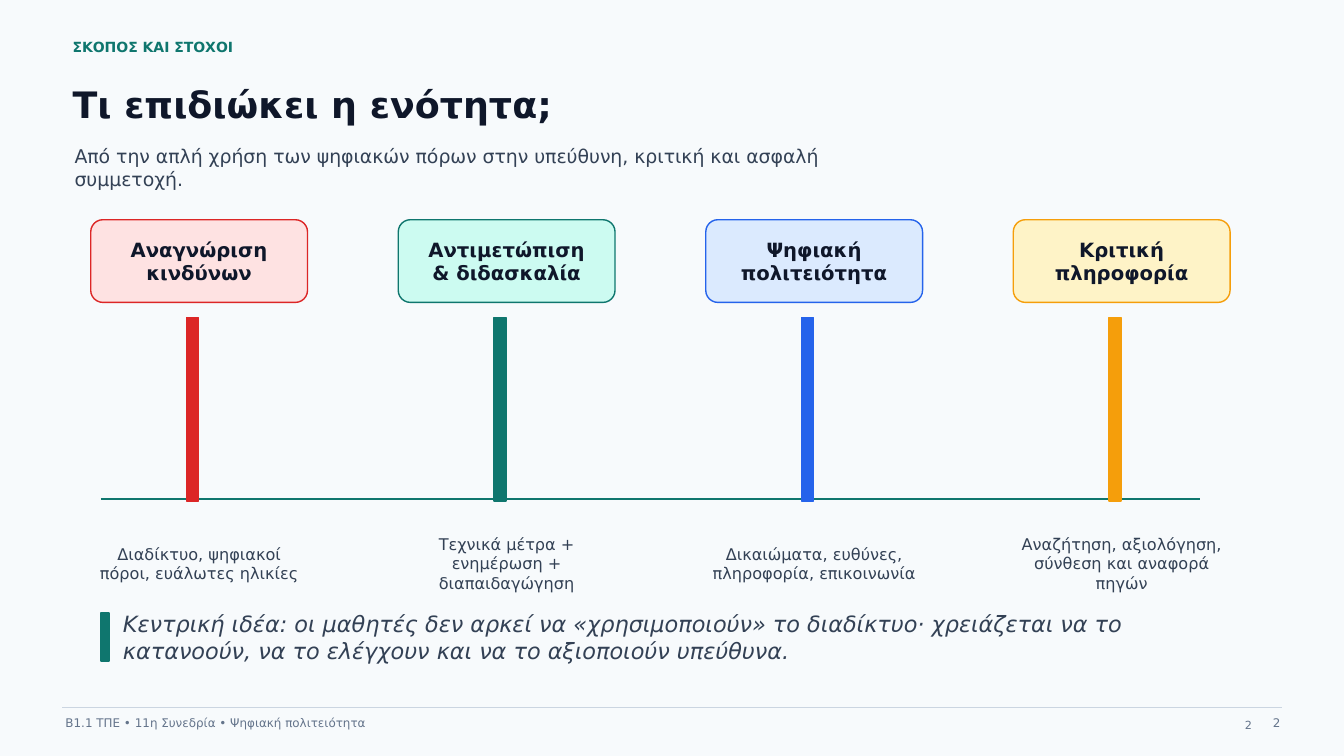
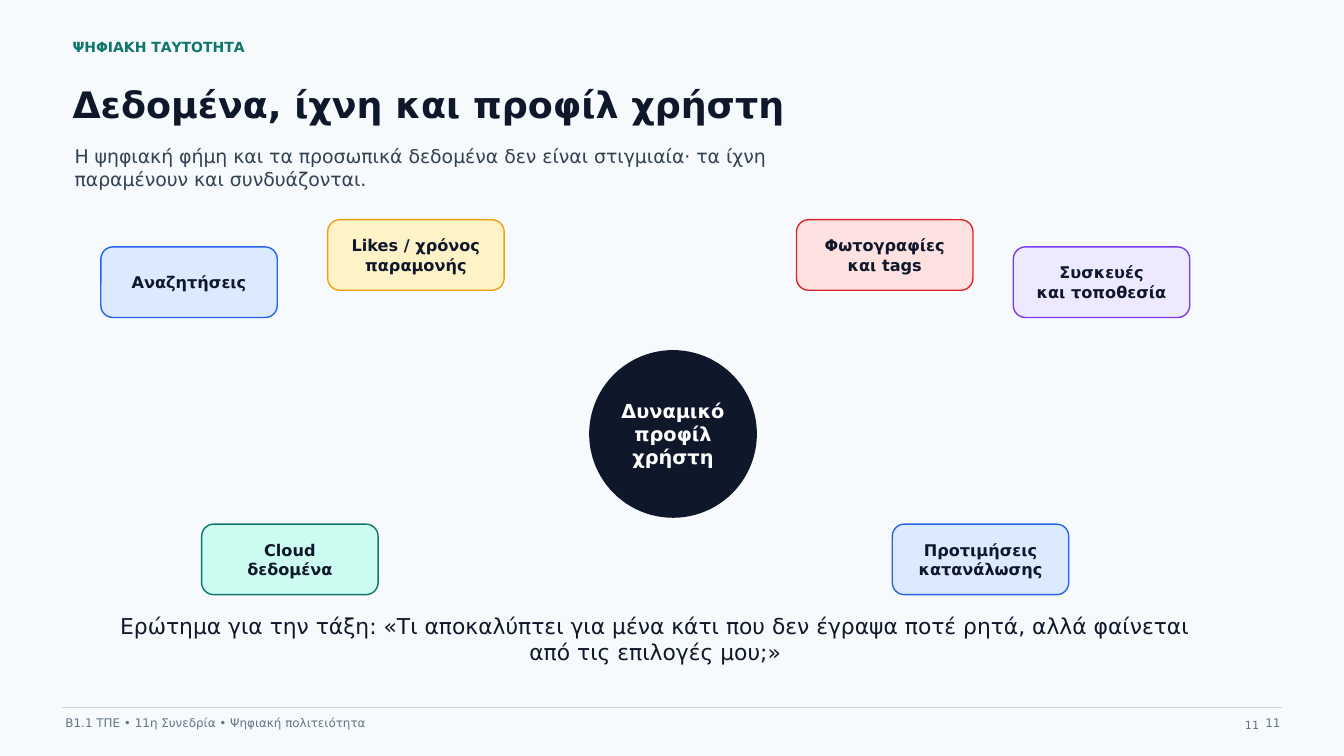
from lxml import etree
from pptx import Presentation
from pptx.dml.color import RGBColor
from pptx.enum.shapes import MSO_CONNECTOR, MSO_SHAPE
from pptx.enum.text import MSO_ANCHOR, MSO_AUTO_SIZE, PP_ALIGN
from pptx.oxml.ns import qn
from pptx.util import Inches, Pt

LEFT, CENTER, RIGHT = PP_ALIGN.LEFT, PP_ALIGN.CENTER, PP_ALIGN.RIGHT
TOP, MIDDLE = MSO_ANCHOR.TOP, MSO_ANCHOR.MIDDLE
RECT, ROUND, OVAL = MSO_SHAPE.RECTANGLE, MSO_SHAPE.ROUNDED_RECTANGLE, MSO_SHAPE.OVAL

FONT = "DejaVu Sans"
PAPER = RGBColor(0xF7, 0xFA, 0xFC)
WHITE = RGBColor(0xFF, 0xFF, 0xFF)
INK = RGBColor(0x0F, 0x17, 0x2A)
SLATE = RGBColor(0x33, 0x41, 0x55)
GREY = RGBColor(0x64, 0x74, 0x8B)
RULE = RGBColor(0xCB, 0xD5, 0xE1)
TEAL = RGBColor(0x0F, 0x76, 0x6E)
MINT = RGBColor(0xCC, 0xFB, 0xF1)
RED = RGBColor(0xDC, 0x26, 0x26)
ROSE = RGBColor(0xFE, 0xE2, 0xE2)
BLUE = RGBColor(0x25, 0x63, 0xEB)
SKY = RGBColor(0xDB, 0xEA, 0xFE)
AMBER = RGBColor(0xF5, 0x9E, 0x0B)
CREAM = RGBColor(0xFE, 0xF3, 0xC7)
VIOLET = RGBColor(0x7C, 0x3A, 0xED)
LILAC = RGBColor(0xED, 0xE9, 0xFE)


def write(shape, text, size, color, bold=False, italic=False,
          align=LEFT, anchor=MIDDLE, inset=(0, 0)):
    """Set the text of a shape; inset is the side and the top margin."""
    frame = shape.text_frame
    frame.text = text
    frame.word_wrap = True
    frame.auto_size = MSO_AUTO_SIZE.NONE
    frame.vertical_anchor = anchor
    frame.margin_left = frame.margin_right = Inches(inset[0])
    frame.margin_top = frame.margin_bottom = Inches(inset[1])
    for para in frame.paragraphs:
        para.alignment = align
        for run in para.runs:
            font = run.font
            font.name, font.size = FONT, Pt(size)
            font.bold, font.italic = bold, italic
            font.color.rgb = color


def draw(slide, kind, at, fill, edge):
    """Add a filled shape; rounded corners always have the same radius."""
    shape = slide.shapes.add_shape(kind, *map(Inches, at))
    shape.shadow.inherit = False
    shape.fill.solid()
    shape.fill.fore_color.rgb = fill
    shape.line.color.rgb = edge
    shape.line.width = Pt(1)
    if kind == ROUND:
        shape.adjustments[0] = 0.12 / min(at[2:])
    return shape


prs = Presentation()
prs.slide_width, prs.slide_height = Inches(13.33), Inches(7.5)
back = prs.slide_master.background.fill
back.solid()
back.fore_color.rgb = PAPER

# Shared frame: kicker, title, lead and footer
HEADS = [
    ("2", "ΣΚΟΠΟΣ ΚΑΙ ΣΤΟΧΟΙ", "Τι επιδιώκει η ενότητα;",
     "Από την απλή χρήση των ψηφιακών πόρων στην υπεύθυνη, κριτική και ασφαλή συμμετοχή."),
    ("11", "ΨΗΦΙΑΚΗ ΤΑΥΤΟΤΗΤΑ", "Δεδομένα, ίχνη και προφίλ χρήστη",
     "Η ψηφιακή φήμη και τα προσωπικά δεδομένα δεν είναι στιγμιαία· τα ίχνη παραμένουν και συνδυάζονται."),
]
FOOTER = "Β1.1 ΤΠΕ • 11η Συνεδρία • Ψηφιακή πολιτειότητα"

for number, kicker, head, lead in HEADS:
    slide = prs.slides.add_slide(prs.slide_layouts[5])
    title = slide.shapes.title
    title.left, title.top = Inches(0.72), Inches(0.72)
    title.width, title.height = Inches(7.8), Inches(0.62)
    write(title, head, 26, INK, bold=True)
    for at, text, size, color, style in [
        ((0.72, 0.34, 4.6, 0.25), kicker, 10, TEAL, {"bold": True}),
        ((0.74, 1.42, 7.7, 0.48), lead, 13.5, SLATE, {}),
        ((0.65, 7.08, 7, 0.18), FOOTER, 8.5, GREY, {}),
        ((12.25, 7.08, 0.45, 0.18), number, 8.5, GREY, {"align": RIGHT}),
        ((12.25, 7.08, 0.87, 0.33), number, 8, GREY,
         {"anchor": TOP, "inset": (0.1, 0.05)}),
    ]:
        box = slide.shapes.add_textbox(*map(Inches, at))
        write(box, text, size, color, **style)

goals, profile = prs.slides

# Footer rules and the axis under the goals
for slide, start, end, y, color, width in [
    (goals, 0.62, 12.72, 7.02, RULE, 0.8),
    (profile, 0.62, 12.72, 7.02, RULE, 0.8),
    (goals, 1, 11.9, 4.95, TEAL, 2),
]:
    line = slide.shapes.add_connector(
        MSO_CONNECTOR.STRAIGHT, Inches(start), Inches(y), Inches(end), Inches(y))
    line.line.color.rgb = color
    line.line.width = Pt(width)
    etree.SubElement(line._element.spPr, qn("a:effectLst"))

# Goals: four columns of card, bar and note
COLUMNS = [
    ("Αναγνώριση\nκινδύνων", "Διαδίκτυο, ψηφιακοί πόροι, ευάλωτες ηλικίες", ROSE, RED),
    ("Αντιμετώπιση\n& διδασκαλία", "Τεχνικά μέτρα + ενημέρωση + διαπαιδαγώγηση", MINT, TEAL),
    ("Ψηφιακή\nπολιτειότητα", "Δικαιώματα, ευθύνες, πληροφορία, επικοινωνία", SKY, BLUE),
    ("Κριτική\nπληροφορία", "Αναζήτηση, αξιολόγηση, σύνθεση και αναφορά πηγών", CREAM, AMBER),
]
for col, (name, note, fill, edge) in enumerate(COLUMNS):
    x = 0.9 + 3.05 * col
    draw(goals, RECT, (x + 0.95, 3.15, 0.12, 1.82), edge, edge)
    card = draw(goals, ROUND, (x, 2.18, 2.15, 0.82), fill, edge)
    write(card, name, 14, INK, bold=True, align=CENTER, inset=(0.04, 0.04))
    box = goals.shapes.add_textbox(*map(Inches, (x, 5.25, 2.15, 0.68)))
    write(box, note, 11.5, SLATE, align=CENTER)

draw(goals, RECT, (1, 6.08, 0.08, 0.48), TEAL, TEAL)
idea = goals.shapes.add_textbox(*map(Inches, (1.22, 6.13, 10.6, 0.38)))
write(idea, "Κεντρική ιδέα: οι μαθητές δεν αρκεί να «χρησιμοποιούν» το διαδίκτυο· "
      "χρειάζεται να το κατανοούν, να το ελέγχουν και να το αξιοποιούν υπεύθυνα.",
      16, SLATE, italic=True)

# Profile: a hub with its data traces around it
hub = draw(profile, OVAL, (5.85, 3.48, 1.65, 1.65), INK, INK)
write(hub, "Δυναμικό\nπροφίλ\nχρήστη", 13.8, WHITE, bold=True, align=CENTER)

TRACES = [
    (1, 2.45, "Αναζητήσεις", SKY, BLUE),
    (3.25, 2.18, "Likes / χρόνος\nπαραμονής", CREAM, AMBER),
    (7.9, 2.18, "Φωτογραφίες\nκαι tags", ROSE, RED),
    (10.05, 2.45, "Συσκευές\nκαι τοποθεσία", LILAC, VIOLET),
    (2, 5.2, "Cloud\nδεδομένα", MINT, TEAL),
    (8.85, 5.2, "Προτιμήσεις\nκατανάλωσης", SKY, BLUE),
]
for x, y, name, fill, edge in TRACES:
    card = draw(profile, ROUND, (x, y, 1.75, 0.7), fill, edge)
    write(card, name, 11.5, INK, bold=True, align=CENTER, inset=(0.04, 0.04))

query = profile.shapes.add_textbox(*map(Inches, (1, 6.1, 11, 0.48)))
write(query, "Ερώτημα για την τάξη: «Τι αποκαλύπτει για μένα κάτι που δεν έγραψα ποτέ "
      "ρητά, αλλά φαίνεται από τις επιλογές μου;»", 15.6, INK, align=CENTER)

prs.save("out.pptx")
